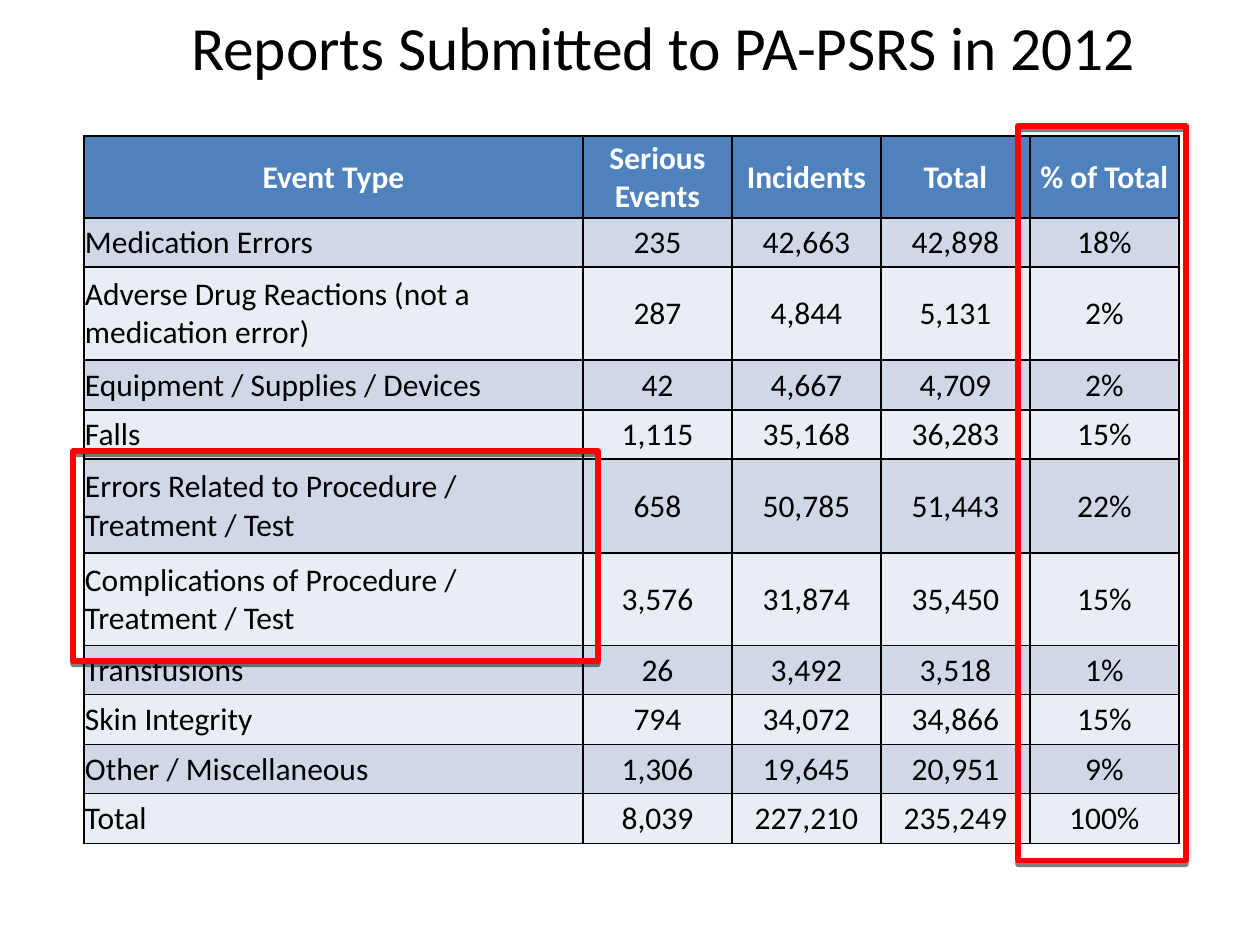
from lxml import etree
from pptx import Presentation
from pptx.dml.color import RGBColor
from pptx.enum.shapes import MSO_SHAPE
from pptx.enum.text import MSO_ANCHOR, PP_ALIGN
from pptx.oxml import parse_xml
from pptx.util import Pt

# Content
TITLE = "Reports Submitted to PA-PSRS in 2012"
ROWS = [
    ("Event Type", "Serious Events", "Incidents", "Total", "% of Total"),
    ("Medication Errors", "235", "42,663", "42,898", "18%"),
    ("Adverse Drug Reactions (not a medication error)",
     "287", "4,844", "5,131", "2%"),
    ("Equipment / Supplies / Devices", "42", "4,667", "4,709", "2%"),
    ("Falls", "1,115", "35,168", "36,283", "15%"),
    ("Errors Related to Procedure / Treatment / Test",
     "658", "50,785", "51,443", "22%"),
    ("Complications of Procedure / Treatment / Test",
     "3,576", "31,874", "35,450", "15%"),
    ("Transfusions", "26", "3,492", "3,518", "1%"),
    ("Skin Integrity", "794", "34,072", "34,866", "15%"),
    ("Other / Miscellaneous", "1,306", "19,645", "20,951", "9%"),
    ("Total", "8,039", "227,210", "235,249", "100%"),
]

# Layout in px, 126 to the inch
PX = 914400 // 126
SIZE = (1260, 945)
TITLE_BOX = (84, -15, 1158, 121)
LEFT, TOP = 84, 136
WIDTHS = [499] + [149] * 4
HEIGHTS = [82, 49, 93, 50, 49, 94, 93, 49, 50, 49, 50]
MARKS = [(1018, 126, 168, 735), (73, 451, 525, 210)]

# Look
BLACK = RGBColor(0, 0, 0)
WHITE = RGBColor(255, 255, 255)
RED = RGBColor(255, 0, 0)
BLUE = RGBColor(0x4F, 0x81, 0xBD)
BANDS = [RGBColor(0xE9, 0xED, 0xF4), RGBColor(0xD0, 0xD8, 0xE8)]
CENTER, START = PP_ALIGN.CENTER, PP_ALIGN.LEFT
MIDDLE = MSO_ANCHOR.MIDDLE
RECT = MSO_SHAPE.RECTANGLE
CELL = {"margin_left": PX, "margin_right": PX, "margin_top": PX,
        "margin_bottom": 0, "vertical_anchor": MIDDLE}
NS = 'xmlns:a="http://schemas.openxmlformats.org/drawingml/2006/main"'
EDGE = ('<a:{} ' + NS + ' w="12700"><a:solidFill><a:srgbClr val="000000"/>'
        '</a:solidFill></a:{}>')
SHADOW = ('<a:effectLst ' + NS + '><a:outerShdw blurRad="0" dist="25400" '
          'dir="5400000" rotWithShape="0"><a:srgbClr val="000000">'
          '<a:alpha val="50000"/></a:srgbClr></a:outerShdw></a:effectLst>')


def emu(box):
    return [n * PX for n in box]


def write(frame, text, size, color, align, bold=False):
    para = frame.paragraphs[0]
    para.alignment = align
    run = para.add_run()
    run.text = text
    look = {"name": "Calibri", "size": Pt(size), "bold": bold}
    for key, val in look.items():
        setattr(run.font, key, val)
    run.font.color.rgb = color


def add_grid(slide):
    box = emu((LEFT, TOP, sum(WIDTHS), sum(HEIGHTS)))
    grid = slide.shapes.add_table(len(ROWS), len(WIDTHS), *box).table
    grid.horz_banding = False
    for col, wide in zip(grid.columns, WIDTHS):
        col.width = wide * PX
    for r, (row, high) in enumerate(zip(ROWS, HEIGHTS)):
        grid.rows[r].height = high * PX
        head = r == 0
        for c, text in enumerate(row):
            cell = grid.cell(r, c)
            for key, val in CELL.items():
                setattr(cell, key, val)
            # Borders come ahead of the fill in the cell properties
            props = cell._tc.get_or_add_tcPr()
            for tag in ("lnL", "lnR", "lnT", "lnB"):
                props.append(etree.fromstring(EDGE.format(tag, tag)))
            cell.fill.solid()
            cell.fill.fore_color.rgb = BLUE if head else BANDS[r % 2]
            write(cell.text_frame, text, 18, WHITE if head else BLACK,
                  CENTER if head or c else START, head)


def add_mark(slide, box):
    mark = slide.shapes.add_shape(RECT, *emu(box))
    mark.fill.background()
    mark.line.color.rgb = RED
    mark.line.width = Pt(3)
    mark._element.spPr.append(parse_xml(SHADOW))


def main():
    deck = Presentation()
    deck.slide_width, deck.slide_height = emu(SIZE)
    slide = deck.slides.add_slide(deck.slide_layouts[6])

    # Table
    add_grid(slide)

    # Title
    frame = slide.shapes.add_textbox(*emu(TITLE_BOX)).text_frame
    frame.word_wrap = True
    frame.vertical_anchor = MIDDLE
    write(frame, TITLE, 35.1, BLACK, CENTER)

    # Red outlines
    for box in MARKS:
        add_mark(slide, box)

    deck.save("out.pptx")


if __name__ == "__main__":
    main()
